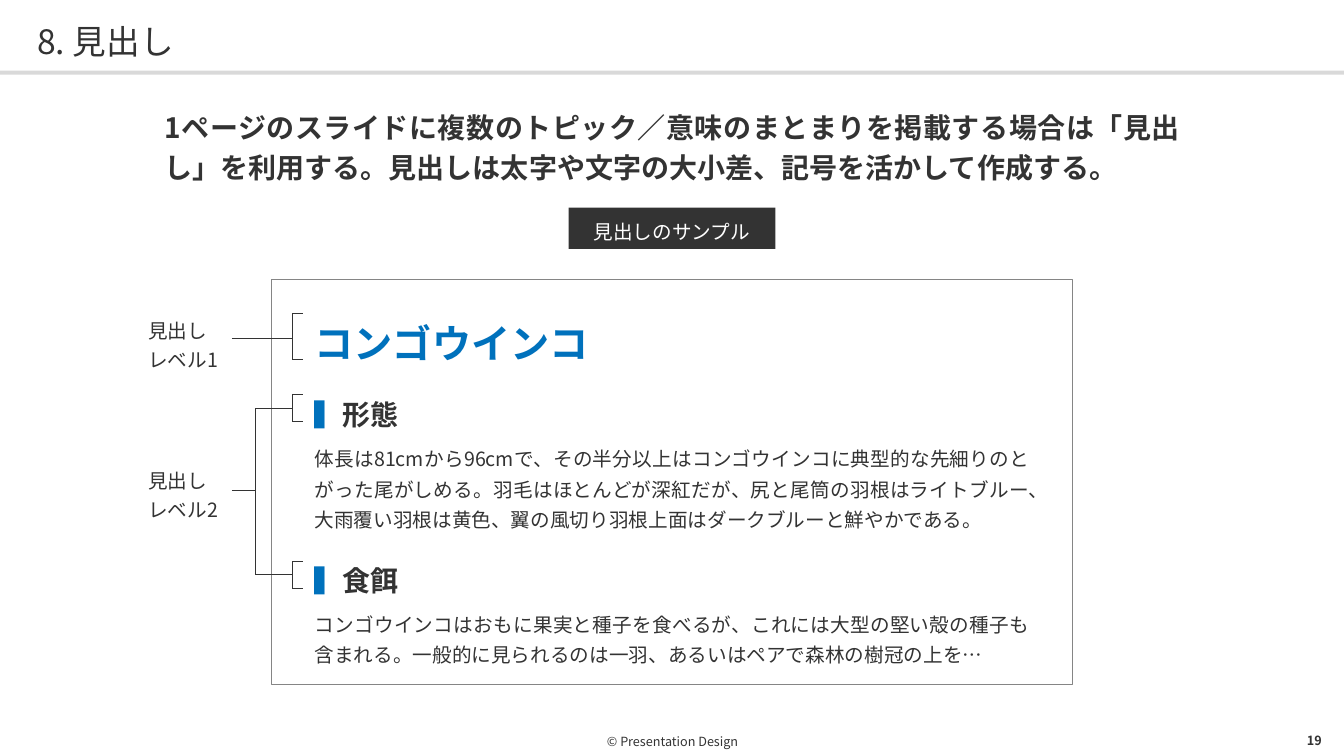
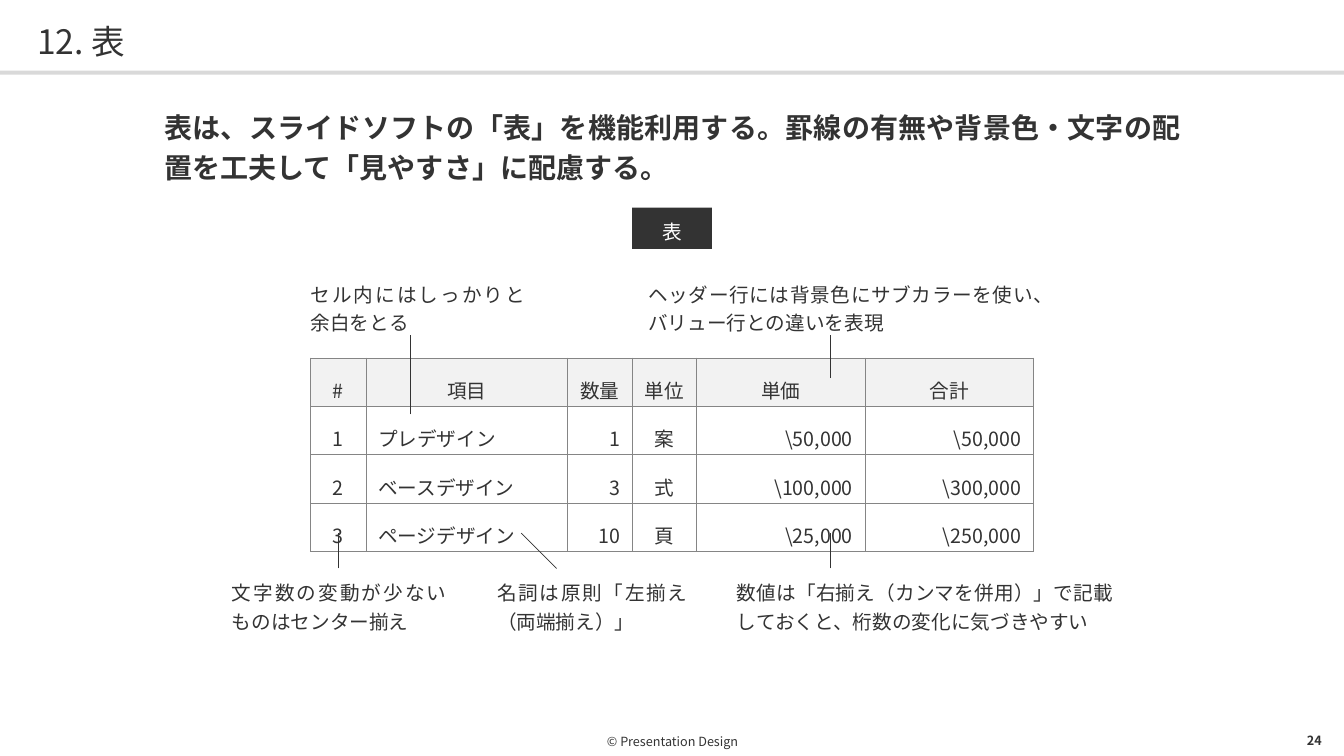
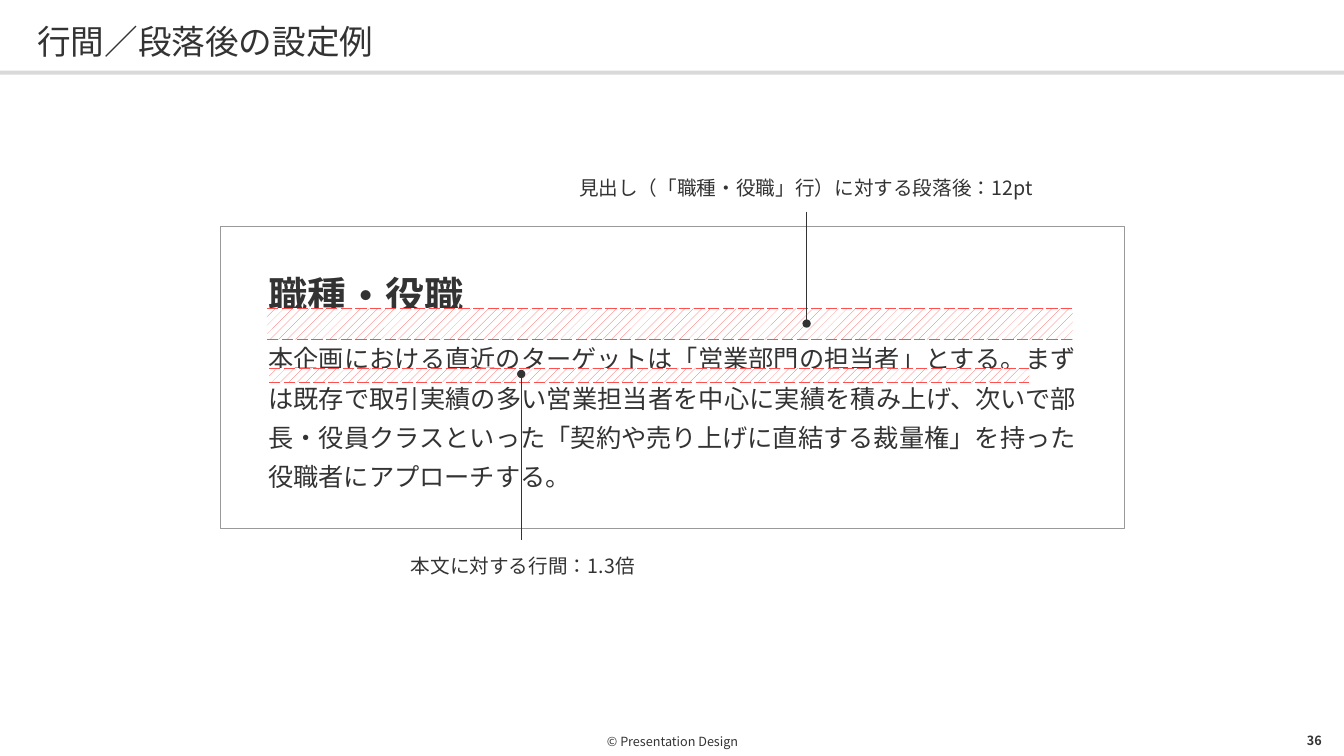
from lxml import etree
from pptx import Presentation
from pptx.dml.color import RGBColor
from pptx.enum import dml, lang, shapes, text
from pptx.oxml import ns
from pptx.util import Inches, Pt

# Shared style
INK = RGBColor(0x33, 0x33, 0x33)
WHITE = RGBColor(0xFF, 0xFF, 0xFF)
BLUE = RGBColor(0x00, 0x71, 0xBC)
RED = RGBColor(0xFF, 0x50, 0x50)
BAND = RGBColor(0xD9, 0xD9, 0xD9)
HEADER = RGBColor(0xF2, 0xF2, 0xF2)
GRID = RGBColor(0x85, 0x85, 0x85)
FRAME = RGBColor(0x99, 0x99, 0x99)
FONT = "Noto Sans CJK JP"
HAIRLINE = Pt(0.5)
TOP, MIDDLE = text.MSO_ANCHOR.TOP, text.MSO_ANCHOR.MIDDLE
LEFT, CENTER, RIGHT, JUSTIFY = (text.PP_ALIGN.LEFT, text.PP_ALIGN.CENTER,
                                text.PP_ALIGN.RIGHT, text.PP_ALIGN.JUSTIFY)


def inches(*lengths):
    return [Inches(length) for length in lengths]


# Text
def add_span(para, words, size=14, color=INK, bold=False):
    span = para.add_run()
    span.text = words
    font = span.font
    font.name, font.size, font.bold = FONT, Pt(size), bold
    font.color.rgb = color
    font.language_id = lang.MSO_LANGUAGE_ID.JAPANESE
    east_asian = etree.SubElement(font._element, ns.qn("a:ea"))
    east_asian.set("typeface", FONT)


def format_para(para, align=JUSTIFY, spacing=1.2, before=0, after=0):
    para.alignment, para.line_spacing = align, spacing
    para.space_before, para.space_after = Pt(before), Pt(after)


def set_up_frame(shape, anchor=TOP, insets=(0, 0, 0, 0)):
    frame = shape.text_frame
    frame.word_wrap = True
    frame.vertical_anchor = anchor
    (frame.margin_left, frame.margin_top,
     frame.margin_right, frame.margin_bottom) = inches(*insets)
    return frame


def write_paras(frame, paras):
    """Each item is (paragraph format, [(words, span format), ...])."""
    for index, (layout, spans) in enumerate(paras):
        para = frame.add_paragraph() if index else frame.paragraphs[0]
        format_para(para, **layout)
        for words, style in spans:
            add_span(para, words, **style)


def add_label(page, box, *lines, align=JUSTIFY, spacing=1.2, anchor=TOP, **style):
    label = page.shapes.add_textbox(*inches(*box))
    write_paras(set_up_frame(label, anchor),
                [(dict(align=align, spacing=spacing), [(line, style)])
                 for line in lines])


# Shapes and lines
def add_box(page, box, fill=None, line=None):
    shape = page.shapes.add_shape(shapes.MSO_SHAPE.RECTANGLE, *inches(*box))
    shape.shadow.inherit = False
    if fill is None:
        shape.fill.background()
    else:
        shape.fill.solid()
        shape.fill.fore_color.rgb = fill
    if line is None:
        shape.line.fill.background()
    else:
        shape.line.color.rgb, shape.line.width = line, HAIRLINE
    return shape


def add_leader(page, x1, y1, x2, y2, dot=None):
    """Draw a thin line; dot is "headEnd" or "tailEnd"."""
    leader = page.shapes.add_connector(shapes.MSO_CONNECTOR.STRAIGHT,
                                       *inches(x1, y1, x2, y2))
    leader.line.color.rgb, leader.line.width = INK, HAIRLINE
    if dot:
        etree.SubElement(leader.line._get_or_add_ln(), ns.qn("a:" + dot),
                         type="oval")
    etree.SubElement(leader._element.spPr, ns.qn("a:effectLst"))


# Tables
def add_grid(page, left, top, columns, rows):
    table = page.shapes.add_table(
        len(rows), len(columns),
        *inches(left, top, sum(columns), sum(rows))).table
    table.first_row = table.horz_banding = False
    for column, width in zip(table.columns, columns):
        column.width = Inches(width)
    for row, height in zip(table.rows, rows):
        row.height = Inches(height)
    return table


def set_borders(cell, color, sides="LRTB", dash="solid"):
    props = cell._tc.get_or_add_tcPr()
    for side in "LRTB":
        edge = etree.SubElement(props, ns.qn("a:ln" + side), w=str(HAIRLINE))
        if side in sides:
            fill = etree.SubElement(edge, ns.qn("a:solidFill"))
            etree.SubElement(fill, ns.qn("a:srgbClr"), val=str(color))
            etree.SubElement(edge, ns.qn("a:prstDash"), val=dash)
        else:
            etree.SubElement(edge, ns.qn("a:noFill"))


def set_margins(cell, left, top, right, bottom):
    (cell.margin_left, cell.margin_top,
     cell.margin_right, cell.margin_bottom) = inches(left, top, right, bottom)


def add_marker(page, box, color, sides, dash="solid", hatched=False):
    """One empty cell whose borders form a bracket or a band."""
    left, top, width, height = box
    cell = add_grid(page, left, top, [width], [height]).cell(0, 0)
    set_margins(cell, 0, 0, 0, 0)
    etree.SubElement(cell.text_frame.paragraphs[0]._p,
                     ns.qn("a:endParaRPr"), sz="100")
    set_borders(cell, color, sides, dash)
    if hatched:
        cell.fill.patterned()
        cell.fill.pattern = dml.MSO_PATTERN.PERCENT_20
        cell.fill.fore_color.rgb, cell.fill.back_color.rgb = color, WHITE
    else:
        cell.fill.background()


# Parts of every page
def add_page(deck, title, number):
    page = deck.slides.add_slide(deck.slide_layouts[6])
    add_box(page, (0, 0.7, 13.33, 0.04), fill=BAND)
    add_label(page, (0.37, 0.17, 12.6, 0.43), title, align=LEFT,
              spacing=1.1, anchor=MIDDLE, size=24)
    add_label(page, (0.96, 7.21, 11.42, 0.29), "© Presentation Design",
              align=CENTER, spacing=1.0, anchor=MIDDLE, size=9)
    add_label(page, (12.61, 7.21, 0.5, 0.28), number, align=RIGHT,
              spacing=1.0, anchor=MIDDLE, size=9, bold=True)
    return page


def add_intro(page, message, tag, tag_width):
    add_label(page, (1.63, 1.03, 10.08, 0.79), message, size=20, bold=True)
    tag_box = add_box(page, ((13.33 - tag_width) / 2, 2.06, tag_width, 0.41),
                      fill=INK)
    write_paras(set_up_frame(tag_box, MIDDLE, (0.12, 0.08, 0.12, 0.06)),
                [(dict(align=CENTER), [(tag, dict(color=WHITE))])])


# Headings: sample article with level brackets
def add_article(page, left, top, width, height):
    add_box(page, (left, top, width, height), fill=WHITE, line=GRID)
    article = page.shapes.add_textbox(
        *inches(left + 0.43, top + 0.3, width - 0.86, height - 0.46))
    heading = dict(before=12, after=6)
    body = dict(spacing=1.3, after=6)
    paras = [(heading, [("コンゴウインコ", dict(size=28, color=BLUE, bold=True))])]
    sections = [
        ("形態", "体長は81cmから96cmで、その半分以上はコンゴウインコに典型的な先細りの"
                 "とがった尾がしめる。羽毛はほとんどが深紅だが、尻と尾筒の羽根はライトブルー、"
                 "大雨覆い羽根は黄色、翼の風切り羽根上面はダークブルーと鮮やかである。"),
        ("食餌", "コンゴウインコはおもに果実と種子を食べるが、これには大型の堅い殻の種子も"
                 "含まれる。一般的に見られるのは一羽、あるいはペアで森林の樹冠の上を…"),
    ]
    for name, words in sections:
        paras += [(heading, [("▍", dict(size=20, color=BLUE, bold=True)),
                             (name, dict(size=20, bold=True))]),
                  (body, [(words, {})])]
    write_paras(set_up_frame(article), paras)


def add_level_marks(page, left, top):
    bracket, trunk, stub = left + 1.43, left + 1.06, left + 0.83
    for offset, height in ((0, 0.45), (0.8, 0.27), (2.46, 0.27)):
        add_marker(page, (bracket, top + offset, 0.11, height), INK, "LTB")
    for level, offset in ((1, 0.01), (2, 1.5)):
        add_label(page, (left, top + offset, 0.75, 0.55),
                  "見出し", f"レベル{level}")
    first, upper, fork, lower = (top + dy for dy in (0.25, 0.94, 1.75, 2.59))
    for ends in ((stub, first, bracket, first), (trunk, upper, bracket, upper),
                 (trunk, lower, bracket, lower), (trunk, upper, trunk, lower),
                 (stub, fork, trunk, fork)):
        add_leader(page, *ends)


def build_headings(deck):
    page = add_page(deck, "8. 見出し", "19")
    add_intro(page, "1ページのスライドに複数のトピック／意味のまとまりを掲載する場合は"
              "「見出し」を利用する。見出しは太字や文字の大小差、記号を活かして作成する。",
              "見出しのサンプル", 2.05)
    add_article(page, 2.69, 2.77, 7.95, 4.02)
    add_level_marks(page, 1.47, 3.11)


# Table: price list with callouts
def add_prices(page, left, top):
    rows = [
        ("#", "項目", "数量", "単位", "単価", "合計"),
        ("1", "プレデザイン", "1", "案", "\\50,000", "\\50,000"),
        ("2", "ベースデザイン", "3", "式", "\\100,000", "\\300,000"),
        ("3", "ページデザイン", "10", "頁", "\\25,000", "\\250,000"),
    ]
    aligns = (CENTER, LEFT, RIGHT, CENTER, RIGHT, RIGHT)
    table = add_grid(page, left, top, (0.55, 2, 0.64, 0.64, 1.67, 1.67),
                     [0.47] * len(rows))
    for r, row in enumerate(rows):
        for c, words in enumerate(row):
            cell = table.cell(r, c)
            cell.vertical_anchor = MIDDLE
            set_margins(cell, 0.12, 0.12, 0.12, 0.08)
            set_borders(cell, GRID)
            if r == 0:
                cell.fill.solid()
                cell.fill.fore_color.rgb = HEADER
            else:
                cell.fill.background()
            align = aligns[c] if r else CENTER
            write_paras(cell.text_frame, [(dict(align=align), [(words, {})])])


def add_callouts(page, left, top):
    above, below = top - 0.79, top + 2.17
    notes = [
        (0, above, 2.13, "セル内にはしっかりと余白をとる"),
        (3.35, above, 3.82,
         "ヘッダー行には背景色にサブカラーを使い、バリュー行との違いを表現"),
        (-0.78, below, 2.13, "文字数の変動が少ないものはセンター揃え"),
        (4.23, below, 3.73,
         "数値は「右揃え（カンマを併用）」で記載しておくと、桁数の変化に気づきやすい"),
        (1.85, below, 1.89, "名詞は原則「左揃え（両端揃え）」"),
    ]
    for dx, y, width, words in notes:
        add_label(page, (left + dx, y, width, 0.55), words)
    # Leaders from the notes above, then from those below
    for dx, depth in ((0.99, 0.56), (5.16, 0.2)):
        add_leader(page, left + dx, top + depth, left + dx, top - 0.23)
    for start, end in ((0.28, 0.28), (2.44, 2.09), (5.16, 5.16)):
        add_leader(page, left + start, top + 2.09, left + end, top + 1.74)


def build_table(deck):
    page = add_page(deck, "12. 表", "24")
    add_intro(page, "表は、スライドソフトの「表」を機能利用する。罫線の有無や背景色・"
              "文字の配置を工夫して「見やすさ」に配慮する。", "表", 0.79)
    add_prices(page, 3.08, 3.55)
    add_callouts(page, 3.08, 3.55)


# Spacing: text panel with marked gaps
def add_spacing_panel(page, left, top, width, height):
    panel = add_box(page, (left, top, width, height), line=FRAME)
    write_paras(set_up_frame(panel, TOP, (0.47, 0.39, 0.47, 0.35)), [
        (dict(align=LEFT, spacing=1.1, before=24, after=12),
         [("職種・役職", dict(size=28, bold=True))]),
        (dict(spacing=1.3),
         [("本企画における直近のターゲットは「営業部門の担当者」とする。"
           "まずは既存で取引実績の多い営業担当者を中心に実績を積み上げ、"
           "次いで部長・役員クラスといった「契約や売り上げに直結する裁量権」"
           "を持った役職者にアプローチする。", dict(size=18))]),
    ])


def add_gap_marks(page, left, top):
    add_label(page, (left + 3.39, top - 0.55, 4.83, 0.27),
              "見出し（「職種・役職」行）に対する段落後：12pt", align=CENTER)
    add_label(page, (left + 1.51, top + 3.2, 2.97, 0.27),
              "本文に対する行間：1.3倍", align=CENTER)
    for dx, dy, width, height in ((0.46, 0.81, 7.99, 0.31),
                                  (0.48, 1.4, 7.54, 0.14)):
        add_marker(page, (left + dx, top + dy, width, height), RED, "TB",
                   dash="dash", hatched=True)
    add_leader(page, left + 5.81, top - 0.15, left + 5.81, top + 0.96, "tailEnd")
    add_leader(page, left + 2.98, top + 1.46, left + 2.98, top + 3.11, "headEnd")


def build_spacing(deck):
    page = add_page(deck, "行間／段落後の設定例", "36")
    add_spacing_panel(page, 2.19, 2.25, 8.96, 2.99)
    add_gap_marks(page, 2.19, 2.25)


def main():
    deck = Presentation()
    deck.slide_width, deck.slide_height = inches(13.33, 7.5)
    for build in (build_headings, build_table, build_spacing):
        build(deck)
    deck.save("out.pptx")


if __name__ == "__main__":
    main()
